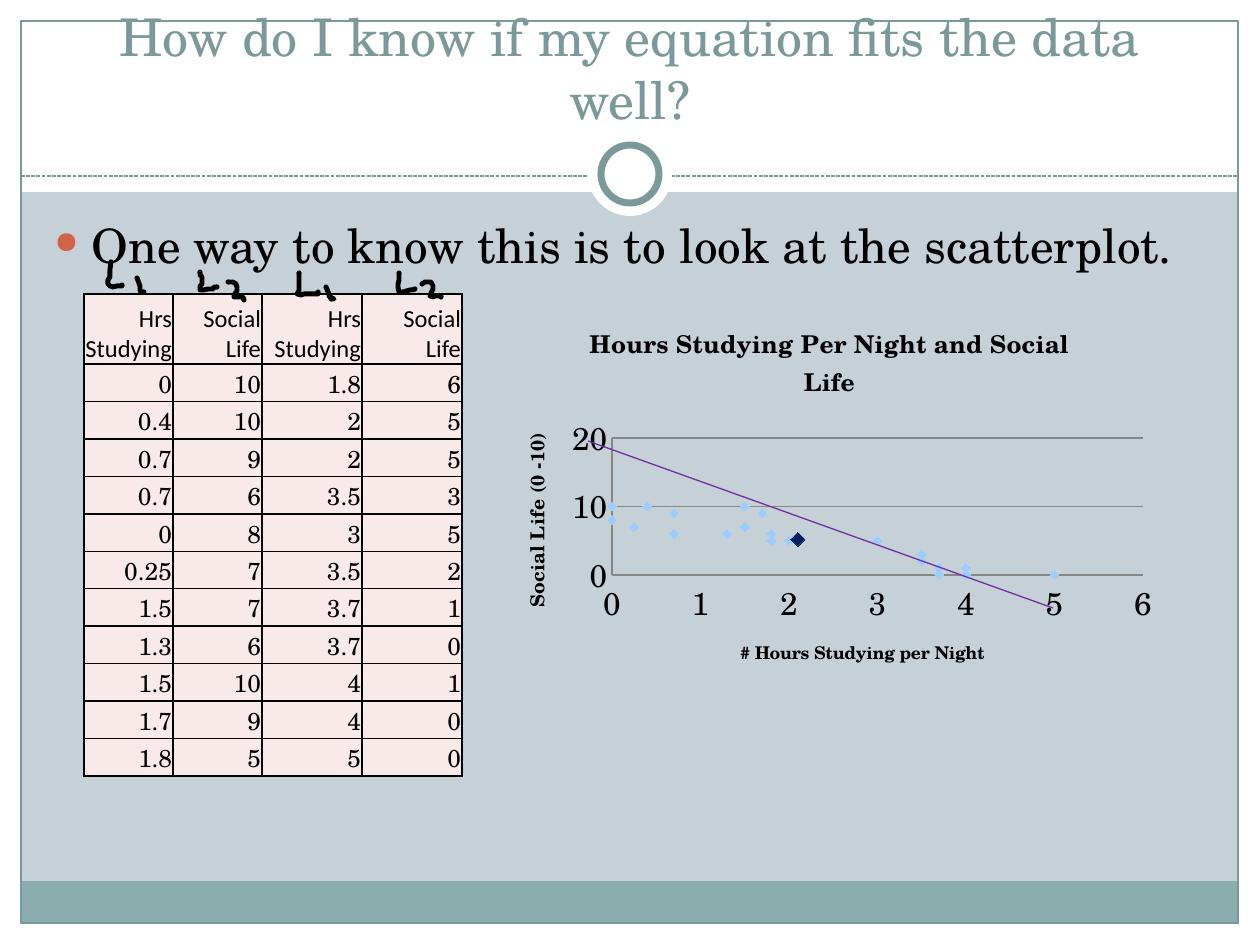
from lxml.etree import SubElement
from pptx import Presentation
from pptx.chart.data import XyChartData
from pptx.dml.color import RGBColor
from pptx.enum.chart import XL_CHART_TYPE as ChartType, XL_MARKER_STYLE as Marker, XL_TICK_MARK as Tick
from pptx.enum.dml import MSO_LINE as Dash
from pptx.enum.shapes import MSO_CONNECTOR as Connector, MSO_SHAPE as Shape
from pptx.enum.text import MSO_ANCHOR as Anchor, PP_ALIGN as Align
from pptx.oxml.ns import qn
from pptx.util import Emu, Pt

# Content
TITLE = "How do I know if my equation fits the data well?"
BULLET = "One way to know this is to look at the scatterplot."
HEADER = ("Hrs Studying", "Social Life")
FIRST_HALF = [(0, 10), (0.4, 10), (0.7, 9), (0.7, 6), (0, 8), (0.25, 7),
              (1.5, 7), (1.3, 6), (1.5, 10), (1.7, 9), (1.8, 5)]
SECOND_HALF = [(1.8, 6), (2, 5), (2, 5), (3.5, 3), (3, 5), (3.5, 2),
               (3.7, 1), (3.7, 0), (4, 1), (4, 0), (5, 0)]
EMPTY_POINT, MEAN_POINT = (None, None), (2.1, 5.2)
POINTS = [EMPTY_POINT] + FIRST_HALF + SECOND_HALF + [MEAN_POINT]
CHART_TITLE = "Hours Studying Per Night and Social Life"
X_TITLE, Y_TITLE = "# Hours Studying per Night", "Social Life (0 -10)"
TABLES = [(84, (89, 89), FIRST_HALF), (262, (100, 100), SECOND_HALF)]

# Handwritten list labels, one pen stroke per row
STROKES = [
    [(122, 285), (122, 286), (117, 286), (113, 287), (110, 286), (108, 284),
     (108, 280), (110, 277), (110, 270), (111, 262)],
    [(141, 292), (144, 292), (141, 292), (140, 290), (140, 286), (137, 278)],
    [(217, 287), (214, 287), (213, 289), (208, 289), (203, 290), (200, 290),
     (200, 286), (202, 284), (202, 277), (200, 275), (200, 272)],
    [(244, 300), (243, 297), (236, 297), (234, 297), (234, 295), (237, 291),
     (237, 287), (236, 284), (233, 282), (228, 282)],
    [(318, 292), (318, 294), (304, 294), (301, 295), (297, 294), (299, 291),
     (299, 282), (299, 273)],
    [(331, 299), (334, 299), (330, 297), (329, 296), (329, 294), (326, 287)],
    [(415, 289), (412, 290), (410, 290), (403, 292), (399, 292), (398, 287),
     (398, 284), (399, 280), (399, 273)],
    [(441, 297), (441, 296), (435, 296), (433, 297), (430, 296), (432, 291),
     (433, 289), (433, 286), (431, 282), (425, 282), (422, 284)],
]

# Look
SERIF, SANS = "TeX Gyre Schola", "Calibri"
BLACK, WHITE, SLATE, GRID = "000000", "FFFFFF", "7C999A", "878787"
UNIT = 914400 / 126
CHART_BOX = (494, 304, 672, 389)


def px(value):
    return Emu(round(value * UNIT))


def rgb(value):
    return RGBColor.from_string(value)


def paint(shape, fill=None, line=None, width=0.75):
    shape.shadow.inherit = False
    if fill:
        shape.fill.solid()
        shape.fill.fore_color.rgb = rgb(fill)
    else:
        shape.fill.background()
    if line:
        shape.line.color.rgb = rgb(line)
        shape.line.width = Pt(width)
    else:
        shape.line.fill.background()


def add_shape(kind, box, **look):
    shape = slide.shapes.add_shape(kind, *map(px, box))
    paint(shape, **look)
    return shape


def add_line(start, end, color):
    line = slide.shapes.add_connector(Connector.STRAIGHT, *map(px, start + end))
    line.line.color.rgb = rgb(color)
    line.line.width = Pt(0.75)
    SubElement(line._element.spPr, qn("a:effectLst"))
    return line


def add_span(para, text, size, color=BLACK, font=SERIF, bold=False):
    span = para.add_run()
    span.text = text
    span.font.size, span.font.name, span.font.bold = Pt(size), font, bold
    span.font.color.rgb = rgb(color)


def add_text(box, anchor):
    frame = slide.shapes.add_textbox(*map(px, box)).text_frame
    frame.word_wrap, frame.vertical_anchor = True, anchor
    return frame.paragraphs[0]


def fill_cell(cell, text, font):
    cell.margin_left = cell.margin_right = cell.margin_top = px(1)
    cell.margin_bottom = 0
    cell.vertical_anchor = Anchor.BOTTOM
    para = cell.text_frame.paragraphs[0]
    para.alignment = Align.RIGHT
    add_span(para, text, 14, font=font)
    props = cell._tc.get_or_add_tcPr()
    for side in ("lnL", "lnR", "lnT", "lnB"):
        border = SubElement(props, qn("a:" + side), w=str(Pt(1)))
        SubElement(SubElement(border, qn("a:solidFill")), qn("a:srgbClr"), val=BLACK)
    cell.fill.solid()
    cell.fill.fore_color.rgb = rgb("F7EAE9")


def add_data_table(left, widths, pairs):
    rows = [HEADER] + pairs
    heights = [70] + [412 / len(pairs)] * len(pairs)
    table = slide.shapes.add_table(len(rows), len(widths), px(left), px(294),
                                   px(sum(widths)), px(sum(heights))).table
    table.first_row = table.horz_banding = False
    for column, width in zip(table.columns, widths):
        column.width = px(width)
    for r, (values, height) in enumerate(zip(rows, heights)):
        table.rows[r].height = px(height)
        for c, value in enumerate(values):
            fill_cell(table.cell(r, c), str(value), SERIF if r else SANS)


def place(part, index, **place_px):
    """Fix a chart part's place, given in slide px."""
    left, top, width, height = CHART_BOX
    origin = {"x": (left, width), "y": (top, height), "w": (0, width), "h": (0, height)}
    for old in part.findall(qn("c:layout")):
        part.remove(old)
    layout = part.makeelement(qn("c:layout"))
    part.insert(index, layout)
    manual = SubElement(layout, qn("c:manualLayout"))
    if "w" in place_px:
        SubElement(manual, qn("c:layoutTarget"), val="inner")
    for mode in ("xMode", "yMode"):
        SubElement(manual, qn("c:" + mode), val="edge")
    for key, value in place_px.items():
        start, span = origin[key]
        SubElement(manual, qn("c:" + key), val=f"{(value - start) / span:.4f}")


def set_title(title, text, size, x, y):
    add_span(title.text_frame.paragraphs[0], text, size, bold=True)
    place(title._element, 1, x=x, y=y)


def style_marker(marker, size, color):
    marker.style, marker.size = Marker.DIAMOND, size
    marker.format.fill.solid()
    marker.format.fill.fore_color.rgb = rgb(color)
    marker.format.line.fill.background()


def add_scatter():
    data = XyChartData()
    points = data.add_series("Series 1")
    for x, y in POINTS:
        points.add_data_point(x, y)
    chart = slide.shapes.add_chart(ChartType.XY_SCATTER, *map(px, CHART_BOX), data).chart
    chart.font.name, chart.font.size = SERIF, Pt(18)
    chart.font.color.rgb = rgb(BLACK)
    chart.has_legend, chart.has_title = False, True
    set_title(chart.chart_title, CHART_TITLE, 14, 585, 317)
    axes = [(chart.category_axis, 6, 1, X_TITLE, 10, 737, 635),
            (chart.value_axis, 20, 10, Y_TITLE, 11, 515, 429)]
    for axis, top, step, text, size, x, y in axes:
        axis.minimum_scale, axis.maximum_scale, axis.major_unit = 0, top, step
        axis.major_tick_mark = axis.minor_tick_mark = Tick.NONE
        axis.tick_labels.number_format = "General"
        axis.tick_labels.number_format_is_linked = False
        axis.format.line.color.rgb = rgb(GRID)
        axis.has_major_gridlines = axis is chart.value_axis
        set_title(axis.axis_title, text, size, x, y)
    chart.value_axis.has_major_gridlines = True
    chart.value_axis.major_gridlines.format.line.color.rgb = rgb(GRID)
    frame = chart.value_axis.axis_title.text_frame
    frame._txBody.bodyPr.set("rot", "-5400000")
    frame._txBody.bodyPr.set("vert", "horz")
    plot = chart.plots[0]
    plot.vary_by_categories = False
    series = plot.series[0]
    series.format.line.fill.background()
    style_marker(series.marker, 5, "99CCFF")
    style_marker(series.points[POINTS.index(MEAN_POINT)].marker, 8, "002060")
    # An empty point has no cached value
    for point in list(series._element.iter(qn("c:pt"))):
        if point.findtext(qn("c:v")) in ("None", ""):
            point.getparent().remove(point)
    place(chart._chartSpace.chart.plotArea, 0, x=612, y=438, w=531, h=137)


def add_stroke(points):
    builder = slide.shapes.build_freeform(*points[0], scale=UNIT)
    builder.add_line_segments(points[1:], close=False)
    paint(builder.convert_to_shape(), line=BLACK, width=2.81)
    for x, y in (points[0], points[-1]):  # round pen tips
        add_shape(Shape.OVAL, (x - 2.5, y - 2.5, 5, 5), fill=BLACK)


deck = Presentation()
deck.slide_width, deck.slide_height = px(1260), px(945)
slide = deck.slides.add_slide(deck.slide_layouts[6])
slide.background.fill.solid()
slide.background.fill.fore_color.rgb = rgb("C5D1D7")

# Page frame
for margin in [(0, 924, 1260, 21), (0, 0, 1260, 192), (0, 0, 21, 945), (1239, 0, 21, 945)]:
    add_shape(Shape.RECTANGLE, margin, fill=WHITE)
add_shape(Shape.RECTANGLE, (21, 881, 1217, 43), fill="8CADAE")
add_shape(Shape.RECTANGLE, (21, 21, 1217, 902), line=SLATE)
add_line((21, 176), (1238, 176), SLATE).line.dash_style = Dash.SQUARE_DOT
add_shape(Shape.OVAL, (588, 132, 84, 84), fill=WHITE)
add_shape(Shape.OVAL, (601, 145, 58, 58), fill=WHITE, line=SLATE, width=4)

# Title and bullet
para = add_text((42, 32, 1176, 104), Anchor.BOTTOM)
para.alignment = Align.CENTER
add_span(para, TITLE, 29.7, SLATE)
para = add_text((42, 210, 1172, 630), Anchor.TOP)
para.space_before = Pt(5.4)
add_span(para, BULLET, 27)
props = para._p.get_or_add_pPr()
props.set("marL", str(px(37)))
props.set("indent", str(-px(37)))
SubElement(SubElement(props, qn("a:buClr")), qn("a:srgbClr"), val="D16349")
SubElement(props, qn("a:buSzPct"), val="65000")
SubElement(props, qn("a:buChar"), char="●")

# Data, chart, fitted line and handwriting
for left, widths, pairs in TABLES:
    add_data_table(left, widths, pairs)
add_scatter()
add_line((588, 441), (1053, 608), "7030A0")
for stroke in STROKES:
    add_stroke(stroke)

deck.save("out.pptx")
